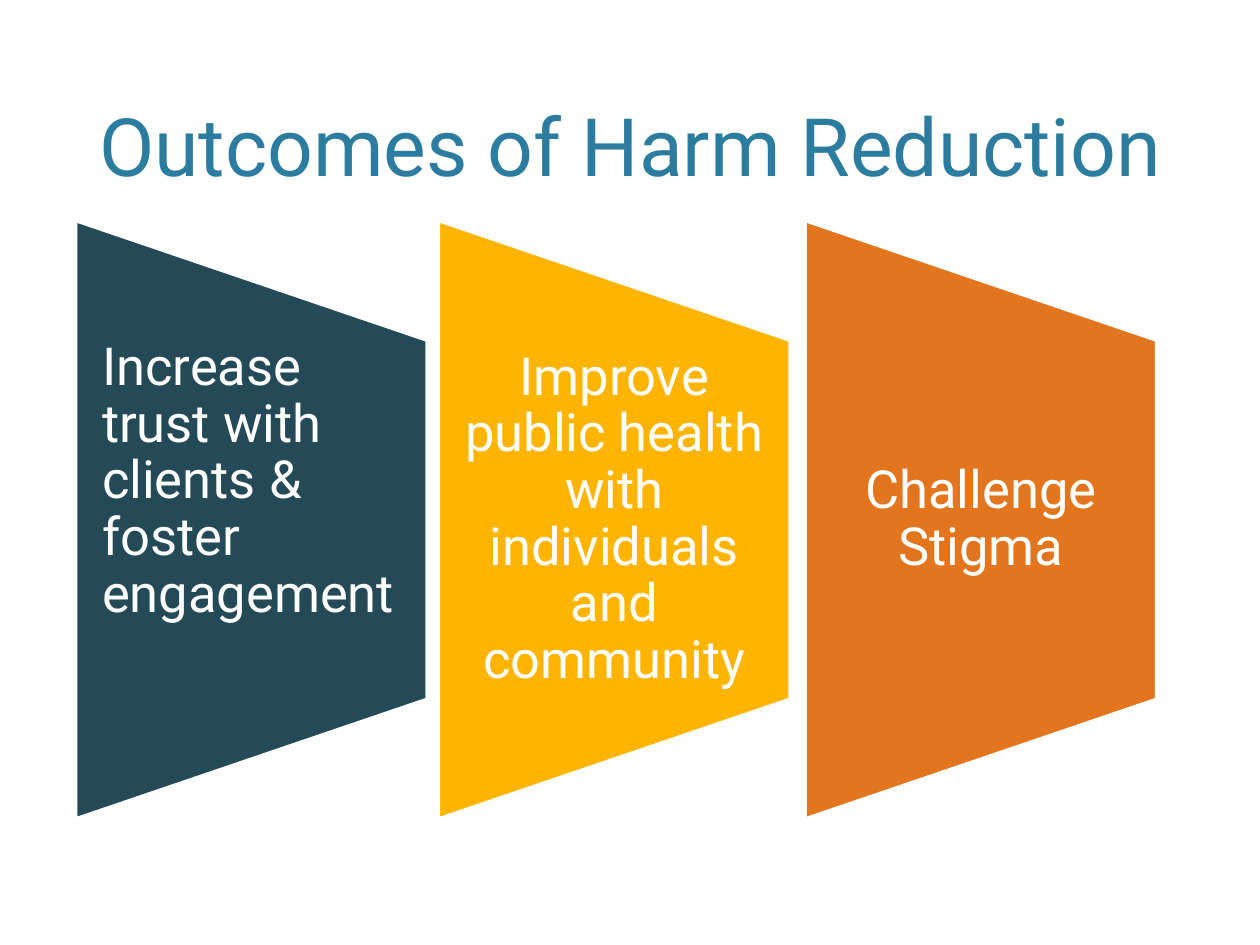
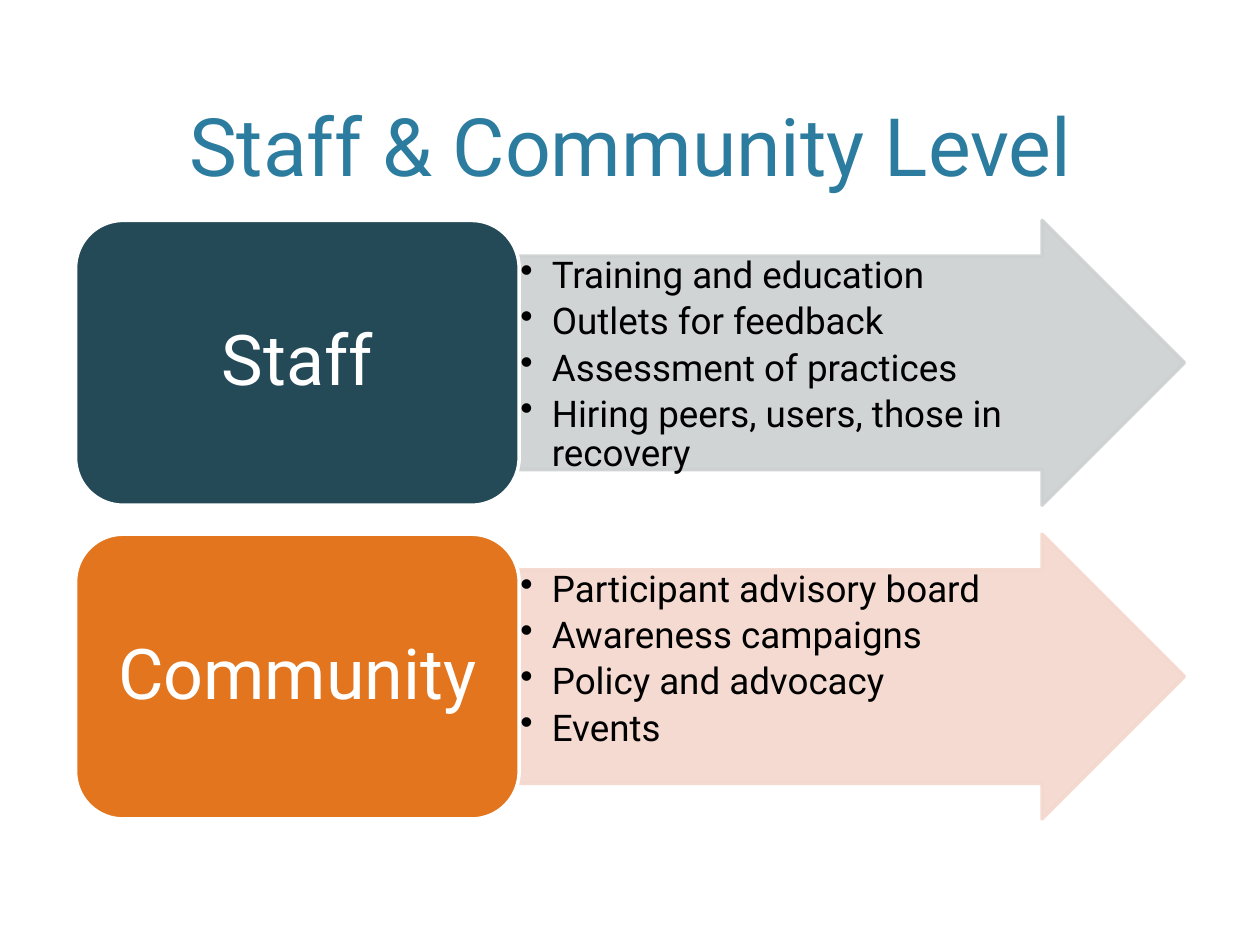
import pptx
import pptx.util
import pptx.dml.color
import pptx.enum.shapes
import pptx.enum.text
import pptx.oxml
import pptx.oxml.ns
import lxml.etree

Inches = pptx.util.Inches
Pt = pptx.util.Pt
RGBColor = pptx.dml.color.RGBColor
MSO_SHAPE = pptx.enum.shapes.MSO_SHAPE
ANCHOR = pptx.enum.text.MSO_ANCHOR
ALIGN = pptx.enum.text.PP_ALIGN
qn = pptx.oxml.ns.qn

FONT = "Roboto"
TITLE_BLUE = RGBColor(0x2C, 0x7C, 0x9F)
TEAL = RGBColor(0x24, 0x4A, 0x58)
YELLOW = RGBColor(0xFF, 0xB4, 0x00)
ORANGE = RGBColor(0xE2, 0x75, 0x1D)
PALE_GREY = RGBColor(0xCD, 0xD0, 0xD1)
PALE_ORANGE = RGBColor(0xF4, 0xD7, 0xCD)
WHITE = RGBColor(0xFF, 0xFF, 0xFF)
BLACK = RGBColor(0x00, 0x00, 0x00)

LEFT = 0.6


def add_text(slide, box, lines, size, color, insets=(0.1, 0.05), anchor=ANCHOR.MIDDLE,
             align=ALIGN.CENTER, line_spacing=0.9, bullets=False):
    """Add a wrapped text box; box is left, top, width, height in inches."""
    frame = slide.shapes.add_textbox(*map(Inches, box)).text_frame
    frame.word_wrap = True
    frame.vertical_anchor = anchor
    frame.margin_left = frame.margin_right = Inches(insets[0])
    frame.margin_top = frame.margin_bottom = Inches(insets[1])
    frame.text = "\n".join(lines)
    for paragraph in frame.paragraphs:
        paragraph.alignment = align
        paragraph.line_spacing = line_spacing
        if bullets:
            paragraph.space_after = Pt(3.7)
            properties = paragraph._p.get_or_add_pPr()
            properties.set("marL", str(Inches(0.25)))
            properties.set("indent", str(-Inches(0.25)))
            lxml.etree.SubElement(properties, qn("a:buChar")).set("char", "•")
        for run in paragraph.runs:
            run.font.name = FONT
            run.font.size = Pt(size)
            run.font.color.rgb = color


def add_block(slide, preset, box, fill, line, opacity=100):
    """Add a filled preset shape with a 2 pt outline."""
    block = slide.shapes.add_shape(preset, *map(Inches, box))
    block.shadow.inherit = False
    block.fill.solid()
    block.fill.fore_color.rgb = fill
    block.line.color.rgb = line
    block.line.width = Pt(2)
    if opacity < 100:
        for color in block._element.spPr.iter(qn("a:srgbClr")):
            lxml.etree.SubElement(color, qn("a:alpha")).set("val", str(opacity * 1000))
    return block


deck = pptx.Presentation()
deck.slide_width = Inches(10)
deck.slide_height = Inches(7.5)

slides = []
for title in ("Outcomes of Harm Reduction", "Staff & Community Level"):
    slide = deck.slides.add_slide(deck.slide_layouts[6])
    add_text(slide, (LEFT, 0.12, 8.8, 1.46), [title], 46, TITLE_BLUE,
             anchor=ANCHOR.BOTTOM, line_spacing=1.0)
    slides.append(slide)
outcomes_slide, levels_slide = slides

# Outcomes: trapezoids turned a quarter, with upright text over each
PANEL_LENGTH, PANEL_WIDTH, PANEL_TOP = 4.75, 2.79, 2.73
outcomes = [
    (0.6, "Increase trust with clients & foster engagement", TEAL, ANCHOR.TOP, ALIGN.LEFT),
    (3.48, "Improve public health with individuals and community", YELLOW,
     ANCHOR.MIDDLE, ALIGN.CENTER),
    (6.39, "Challenge Stigma", ORANGE, ANCHOR.MIDDLE, ALIGN.CENTER),
]
for left, outcome, color, anchor, align in outcomes:
    unturned_left = left - (PANEL_LENGTH - PANEL_WIDTH) / 2
    panel = add_block(outcomes_slide, MSO_SHAPE.FLOWCHART_MANUAL_OPERATION,
                      (unturned_left, PANEL_TOP, PANEL_LENGTH, PANEL_WIDTH), color, WHITE)
    panel.rotation = 270
    add_text(outcomes_slide, (left, 2.7, PANEL_WIDTH, 2.85), [outcome], 30, WHITE,
             insets=(0.21, 0), anchor=anchor, align=align)

# Levels: a rounded label followed by an arrow of actions
ROW_TOP, ROW_PITCH, ROW_HEIGHT = 1.75, 2.49, 2.26
LABEL_WIDTH = 3.52
ARROW_LEFT = LEFT + LABEL_WIDTH
levels = [
    ("Staff", TEAL, PALE_GREY,
     ["Training and education", "Outlets for feedback", "Assessment of practices",
      "Hiring peers, users, those in recovery"]),
    ("Community", ORANGE, PALE_ORANGE,
     ["Participant advisory board", "Awareness campaigns", "Policy and advocacy", "Events"]),
]
for row, (level, color, pale, actions) in enumerate(levels):
    top = ROW_TOP + row * ROW_PITCH
    arrow = add_block(levels_slide, MSO_SHAPE.RIGHT_ARROW,
                      (ARROW_LEFT, top, 5.28, ROW_HEIGHT), pale, pale, opacity=90)
    arrow.adjustments[0] = 0.75
    arrow.adjustments[1] = 0.5
    add_text(levels_slide, (ARROW_LEFT, top + 0.28, 4.43, 1.7), actions, 21, BLACK,
             insets=(0.01, 0.01), anchor=ANCHOR.TOP, align=ALIGN.LEFT, bullets=True)
    add_block(levels_slide, MSO_SHAPE.ROUNDED_RECTANGLE,
              (LEFT, top, LABEL_WIDTH, ROW_HEIGHT), color, WHITE)
    add_text(levels_slide, (LEFT + 0.11, top + 0.11, 3.3, 2.04), [level], 40, WHITE,
             insets=(0.17, 0.08))

deck.save("out.pptx")
